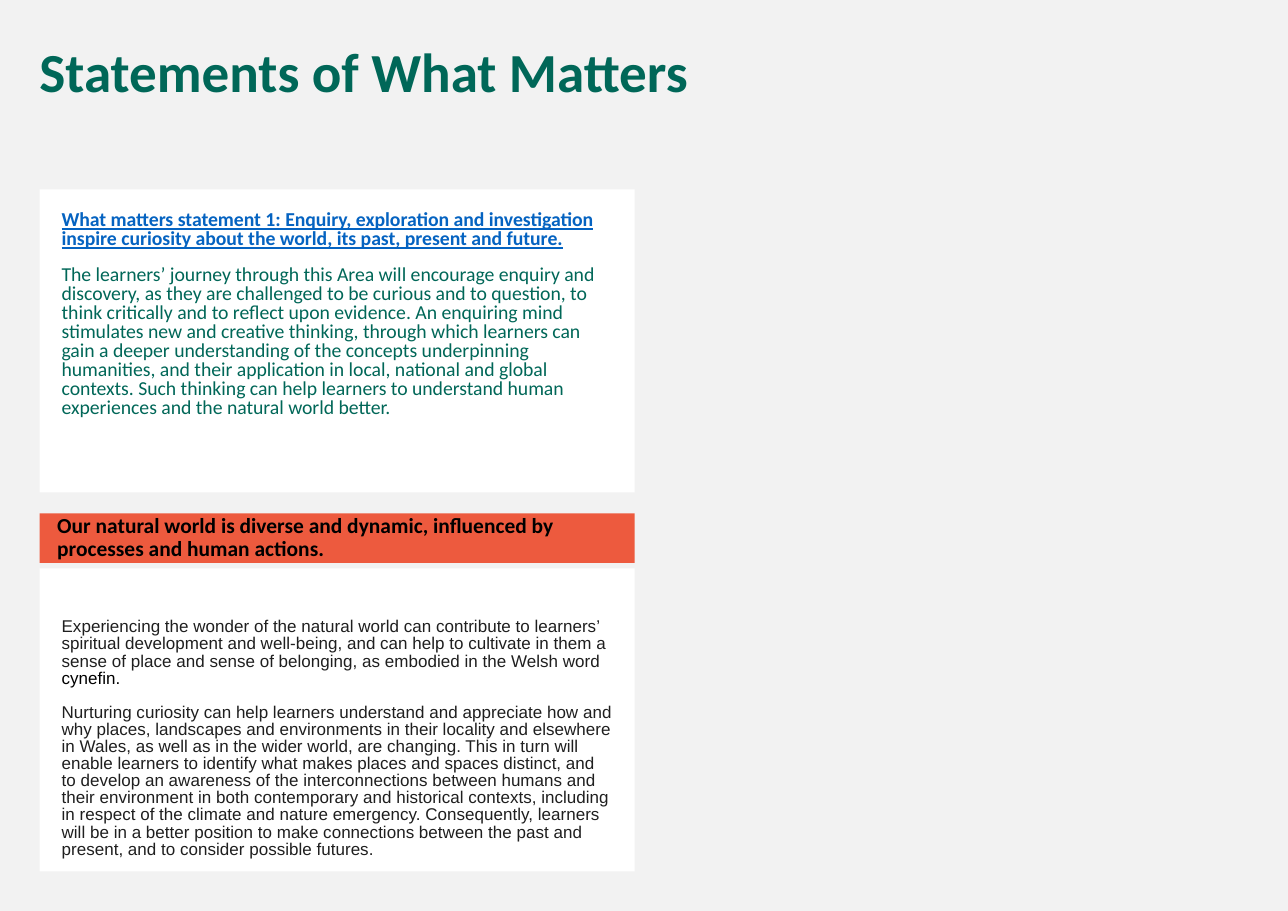
from pptx import Presentation
from pptx.dml.color import RGBColor
from pptx.enum.shapes import MSO_SHAPE
from pptx.enum.text import MSO_ANCHOR, PP_ALIGN
from pptx.util import Inches, Pt

GREEN = RGBColor(0x00, 0x67, 0x58)
BLUE = RGBColor(0x05, 0x63, 0xC1)
ORANGE = RGBColor(0xED, 0x5A, 0x3E)
BLACK = RGBColor(0x00, 0x00, 0x00)
CHARCOAL = RGBColor(0x1F, 0x1F, 0x1F)
WHITE = RGBColor(0xFF, 0xFF, 0xFF)
GREY = RGBColor(0xF2, 0xF2, 0xF2)

LEFT, WIDTH, PANEL_HEIGHT = 0.36, 5.4, 2.75

STATEMENT = (
    "What matters statement 1: Enquiry, exploration and investigation "
    "inspire curiosity about the world, its past, present and future."
)
JOURNEY = (
    "The learners’ journey through this Area will encourage enquiry and discovery, "
    "as they are challenged to be curious and to question, to think critically and "
    "to reflect upon evidence. An enquiring mind stimulates new and creative "
    "thinking, through which learners can gain a deeper understanding of the "
    "concepts underpinning humanities, and their application in local, national and "
    "global contexts. Such thinking can help learners to understand human "
    "experiences and the natural world better."
)
WONDER = (
    "Experiencing the wonder of the natural world can contribute to learners’ "
    "spiritual development and well-being, and can help to cultivate in them a "
    "sense of place and sense of belonging, as embodied in the Welsh word "
)
CURIOSITY = (
    "Nurturing curiosity can help learners understand and appreciate how and why "
    "places, landscapes and environments in their locality and elsewhere in Wales, "
    "as well as in the wider world, are changing. This in turn will enable learners "
    "to identify what makes places and spaces distinct, and to develop an awareness "
    "of the interconnections between humans and their environment in both "
    "contemporary and historical contexts, including in respect of the climate and "
    "nature emergency. Consequently, learners will be in a better position to make "
    "connections between the past and present, and to consider possible futures."
)


def add_run(p, text, font="Calibri", size=12.9, color=GREEN, bold=False, underline=False):
    """Append a formatted run to a paragraph."""
    r = p.add_run()
    r.text = text
    r.font.name = font
    r.font.size = Pt(size)
    r.font.color.rgb = color
    r.font.bold = bold
    r.font.underline = underline


class StatementSlide:
    """Holds the slide and its shared paragraph style."""

    def __init__(self, prs):
        """Add a blank slide with a grey background."""
        self.space_before = Pt(11)
        self.s = prs.slides.add_slide(prs.slide_layouts[6])
        self.s.background.fill.solid()
        self.s.background.fill.fore_color.rgb = GREY

    def fill_text(self, tf, paragraphs, spacing, insets, anchor=MSO_ANCHOR.TOP):
        """Fill a text frame with paragraphs, each a list of (text, format) runs."""
        tf.word_wrap = True
        tf.vertical_anchor = anchor
        tf.margin_left, tf.margin_top, tf.margin_right, tf.margin_bottom = map(Inches, insets)
        for i, runs in enumerate(paragraphs):
            p = tf.add_paragraph() if i else tf.paragraphs[0]
            p.alignment = PP_ALIGN.LEFT
            p.line_spacing = spacing
            p.space_before = self.space_before
            for text, style in runs:
                add_run(p, text, **style)

    def title(self, text):
        """Add the slide title."""
        sp = self.s.shapes.add_textbox(Inches(0.26), Inches(0.36), Inches(11.08), Inches(0.65))
        self.fill_text(sp.text_frame, [[(text, dict(size=36, bold=True))]], 0.9,
                       (0.1, 0.05, 0.1, 0.05))

    def panel(self, top, height, fill, paragraphs, **layout):
        """Add a filled rectangle with text in the left column."""
        sp = self.s.shapes.add_shape(MSO_SHAPE.RECTANGLE, Inches(LEFT), Inches(top),
                                     Inches(WIDTH), Inches(height))
        sp.shadow.inherit = False
        sp.fill.solid()
        sp.fill.fore_color.rgb = fill
        sp.line.fill.background()
        self.fill_text(sp.text_frame, paragraphs, **layout)


def main():
    """Build and save the slide."""
    prs = Presentation()
    prs.slide_width, prs.slide_height = Inches(11.69), Inches(8.27)
    slide = StatementSlide(prs)
    body = dict(font="Arial", size=11.1, color=CHARCOAL)

    slide.panel(1.72, PANEL_HEIGHT, WHITE, [
        [(STATEMENT, dict(color=BLUE, bold=True, underline=True))],
        [(JOURNEY, {})],
    ], spacing=0.8, insets=(0.2, 0.2, 0.2, 0.2))
    slide.panel(4.66, 0.45, ORANGE, [
        [("Our natural world is diverse and dynamic, influenced by processes and human actions.",
          dict(size=14, color=BLACK, bold=True))],
    ], spacing=0.9, insets=(0.16, 0.05, 0.1, 0.05), anchor=MSO_ANCHOR.MIDDLE)
    slide.panel(5.16, PANEL_HEIGHT, WHITE, [
        [(WONDER, body), ("cynefin.", dict(body, color=BLACK))],
        [(CURIOSITY, body)],
    ], spacing=0.84, insets=(0.2, 0.46, 0.2, 0.2))
    slide.title("Statements of What Matters")
    prs.save("out.pptx")


if __name__ == "__main__":
    main()
